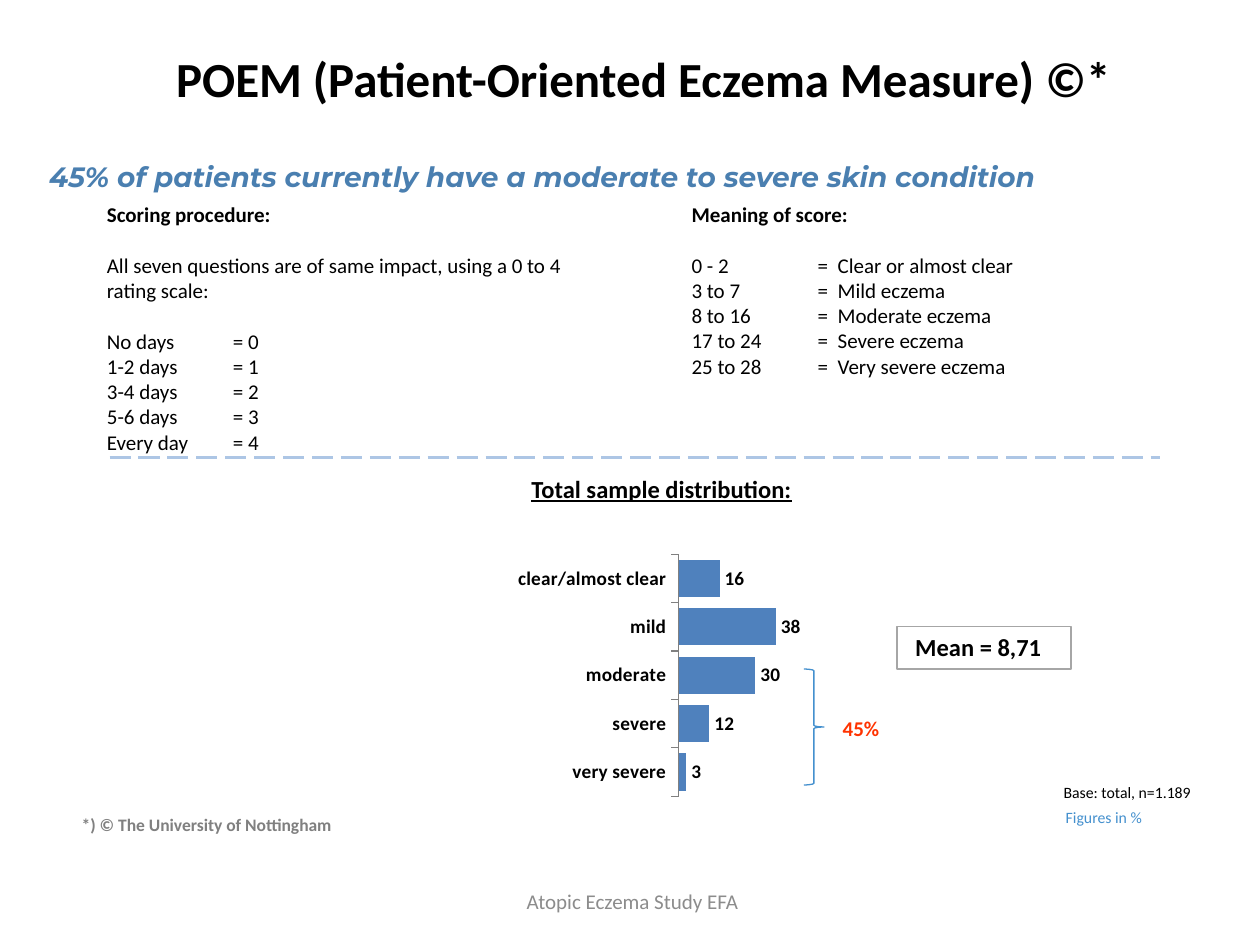
from lxml import etree
from pptx import Presentation, util as u
from pptx.chart.data import CategoryChartData
from pptx.dml.color import RGBColor
from pptx.enum import chart as ch, dml, shapes, text
from pptx.oxml import parse_xml
from pptx.oxml.ns import nsdecls, qn

# The slide is a grid of 100 columns by 75 rows of square cells
COLS, ROWS = 100, 75
CELL = u.Inches(0.1)
BLACK, BLUE, SKY = "000000", "4F81BD", "4490CE"
LINE_GAP = 14.65  # one line of 12 pt text
LEFT, CENTER, RIGHT = text.PP_ALIGN.LEFT, text.PP_ALIGN.CENTER, text.PP_ALIGN.RIGHT
BOLD12 = dict(size=12, bold=True)


def cells(n):
    return u.Emu(round(n * CELL))


def rgb(value):
    return RGBColor.from_string(value)


def style(font, size=12, color=BLACK, name="Calibri", **more):
    """Set the font from a dict of format values."""
    for key, value in dict(size=u.Pt(size), name=name, **more).items():
        setattr(font, key, value)
    font.color.rgb = rgb(color)


def write(p, words, align=LEFT, **fmt):
    p.alignment = align
    r = p.add_run()
    r.text = words
    style(r.font, **fmt)


def prepare(tf, insets=(1, 0.5, 1, 0.5), anchor=text.MSO_ANCHOR.TOP):
    tf.word_wrap = True
    tf.vertical_anchor = anchor
    for side, inset in zip(("left", "top", "right", "bottom"), insets):
        setattr(tf, f"margin_{side}", cells(inset))
    return tf


def add_text(s, box, words, align=LEFT, frame=None, **fmt):
    sp = s.shapes.add_textbox(*map(cells, box))
    write(prepare(sp.text_frame, **(frame or {})).paragraphs[0], words, align, **fmt)


def add_tabs(p, stops):
    tabs = etree.SubElement(p._p.get_or_add_pPr(), qn("a:tabLst"))
    for stop in stops:
        etree.SubElement(tabs, qn("a:tab"), pos=str(cells(stop)), algn="l")


def add_blocks(s, box, blocks, stops):
    """Blocks of lines, each block one line apart from the one before."""
    tf = prepare(s.shapes.add_textbox(*map(cells, box)).text_frame)
    for b, lines in enumerate(blocks):
        for i, line in enumerate(lines):
            first = b == i == 0
            p = tf.paragraphs[0] if first else tf.add_paragraph()
            if b and i == 0:
                p.space_before = u.Pt(LINE_GAP)
            if "\t" in line:
                add_tabs(p, stops)
            write(p, line, bold=first)


def add_outline(s, kind, box, color):
    sp = s.shapes.add_shape(kind, *map(cells, box))
    sp.shadow.inherit = False
    sp.fill.background()
    sp.line.color.rgb = rgb(color)
    sp.line.width = u.Pt(0.75)
    return sp


def add_divider(s, x1, x2, y, color):
    line = s.shapes.add_connector(shapes.MSO_CONNECTOR.STRAIGHT, *map(cells, (x1, y, x2, y)))
    line.line.color.rgb = rgb(color)
    line.line.width = u.Pt(1.5)
    line.line.dash_style = dml.MSO_LINE.LONG_DASH
    etree.SubElement(line._element.spPr, qn("a:effectLst"))


def set_plot_area(chart, x, y, w, h):
    area = chart._chartSpace.chart.plotArea
    for old in area.findall(qn("c:layout")):
        area.remove(old)
    parts = "".join(f'<c:{k} val="{v}"/>' for k, v in dict(
        layoutTarget="inner", xMode="edge", yMode="edge", x=x, y=y, w=w, h=h).items())
    area.insert(0, parse_xml(f'<c:layout {nsdecls("c")}><c:manualLayout>{parts}'
                             '</c:manualLayout></c:layout>'))


def add_bars(s, box, scores):
    data = CategoryChartData()
    data.categories = list(scores)
    data.add_series("Series 1", scores.values())
    chart = s.shapes.add_chart(ch.XL_CHART_TYPE.BAR_CLUSTERED, *map(cells, box), data).chart
    chart.has_legend = chart.has_title = False
    style(chart.font, 11, bold=True)
    set_plot_area(chart, 0.53, 0.03, 0.46, 0.96)

    # Axes
    cat, val = chart.category_axis, chart.value_axis
    cat.reverse_order = True
    cat.major_tick_mark = ch.XL_TICK_MARK.OUTSIDE
    cat.format.line.color.rgb = rgb("808080")
    style(cat.tick_labels.font, 11, bold=True)
    val.minimum_scale, val.maximum_scale = 0, 100
    val.has_major_gridlines = val.visible = False

    # Bars and their values
    plot = chart.plots[0]
    plot.gap_width, plot.vary_by_categories = 30, False
    fill = plot.series[0].format.fill
    fill.solid()
    fill.fore_color.rgb = rgb(BLUE)
    labels = plot.series[0].data_labels
    labels.show_value = True
    labels.position = ch.XL_LABEL_POSITION.OUTSIDE_END
    style(labels.font, 11, bold=True)


def main():
    prs = Presentation()
    prs.slide_width, prs.slide_height = cells(COLS), cells(ROWS)
    s = prs.slides.add_slide(prs.slide_layouts[6])
    middle = dict(anchor=text.MSO_ANCHOR.MIDDLE)

    # Title and key message
    add_text(s, (7.5, 2.9, 87.1, 6.6), "POEM (Patient-Oriented Eczema Measure) ©*",
             CENTER, middle, size=28, bold=True)
    add_text(s, (3.9, 12.7, 92.1, 4.3),
             "45% of patients currently have a moderate to severe skin condition",
             frame=dict(insets=(0, 0, 0, 0.5)), size=16, color="4A7FB0",
             name="Montserrat", bold=True, italic=True)

    # Scoring rules and what the scores mean
    days = ["No days", "1-2 days", "3-4 days", "5-6 days", "Every day"]
    meanings = {"0 - 2": "Clear or almost clear", "3 to 7": "Mild eczema",
                "8 to 16": "Moderate eczema", "17 to 24": "Severe eczema",
                "25 to 28": "Very severe eczema"}
    add_blocks(s, (7.5, 15.5, 40.9, 21.2), [
        ["Scoring procedure:"],
        ["All seven questions are of same impact, using a 0 to 4 rating scale:"],
        [f"{day}\t= {score}" for score, day in enumerate(days)]], [10])
    add_blocks(s, (53.9, 15.5, 40.9, 15.1), [
        ["Meaning of score:"],
        [f"{span}\t=\t{meaning}" for span, meaning in meanings.items()]], [10, 11.6])
    add_divider(s, 8.7, 92.1, 36.3, "ADC6E5")

    # Distribution chart
    add_text(s, (33.8, 37.1, 37.4, 3.4), "Total sample distribution:", CENTER,
             size=14, bold=True, underline=True)
    add_bars(s, (30.5, 43.4, 44.1, 20), {
        "clear/almost clear": 16, "mild": 38, "moderate": 30, "severe": 12, "very severe": 3})
    add_outline(s, shapes.MSO_SHAPE.RIGHT_BRACE, (63.8, 53.1, 1.6, 9.2), SKY)
    add_text(s, (65.9, 56.3, 5.6, 3), "45%", color="FF3300", **BOLD12)
    mean = add_outline(s, shapes.MSO_SHAPE.RECTANGLE, (71.2, 49.7, 13.8, 3.4), "A6A6A6")
    tf = prepare(mean.text_frame, insets=(1, 0.5, 1.9, 0.5))
    write(tf.paragraphs[0], "Mean = 8,71", CENTER, size=14, bold=True)

    # Notes and footer
    add_text(s, (75, 61.5, 20.7, 2.7), "Base: total, n=1.189", RIGHT,
             dict(insets=(1.2, 0.6, 1.2, 0.6)), size=9)
    add_text(s, (83.6, 63.6, 12.2, 2.5), "Figures in %", size=9, color=SKY)
    add_text(s, (5.5, 64.1, 33.9, 2.7), "*) © The University of Nottingham",
             size=10, color="808080", bold=True)
    add_text(s, (39.8, 69.5, 20.8, 4), "Atopic Eczema Study EFA", CENTER, middle,
             color="8C8C8C")

    prs.save("out.pptx")


if __name__ == "__main__":
    main()
